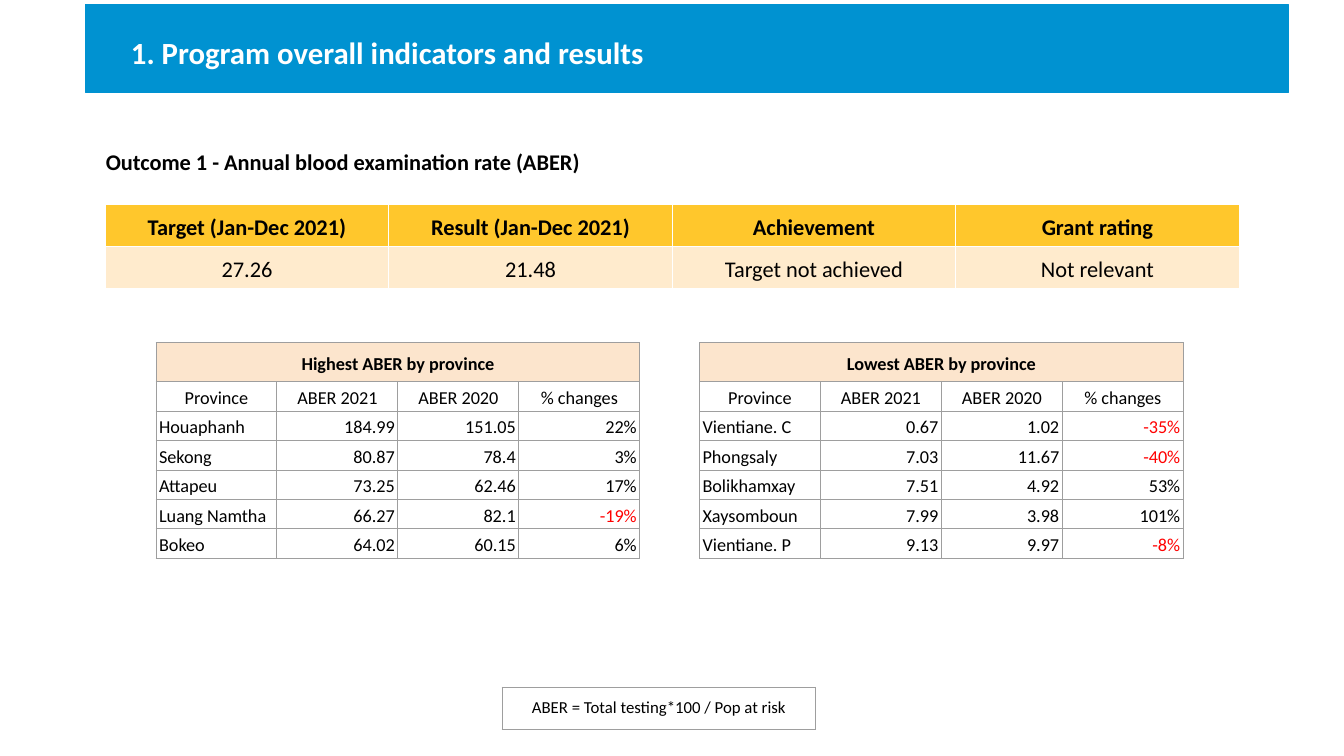
from lxml import etree
from pptx import Presentation
from pptx import util as u
from pptx.dml.color import RGBColor
from pptx.enum import shapes, text
from pptx.oxml import ns

FONT = "Calibri"
BLACK, WHITE, RED = "000000", "FFFFFF", "FF0000"
BLUE, GOLD, CREAM, PEACH, GREY = "0092D1", "FFC72C", "FFEBCD", "FCE5CD", "9E9E9E"
LEFT, CENTER, RIGHT = text.PP_ALIGN.LEFT, text.PP_ALIGN.CENTER, text.PP_ALIGN.RIGHT
TIGHT_MARGINS = (2.25, 1.5)

SUMMARY = [
    ["Target (Jan-Dec 2021)", "Result (Jan-Dec 2021)", "Achievement", "Grant rating"],
    ["27.26", "21.48", "Target not achieved", "Not relevant"],
]
PROVINCE_HEADINGS = ["Province", "ABER 2021", "ABER 2020", "% changes"]
HIGHEST = [
    ["Houaphanh", "184.99", "151.05", "22%"],
    ["Sekong", "80.87", "78.4", "3%"],
    ["Attapeu", "73.25", "62.46", "17%"],
    ["Luang Namtha", "66.27", "82.1", "-19%"],
    ["Bokeo", "64.02", "60.15", "6%"],
]
LOWEST = [
    ["Vientiane. C", "0.67", "1.02", "-35%"],
    ["Phongsaly", "7.03", "11.67", "-40%"],
    ["Bolikhamxay", "7.51", "4.92", "53%"],
    ["Xaysomboun", "7.99", "3.98", "101%"],
    ["Vientiane. P", "9.13", "9.97", "-8%"],
]


def rgb(value):
    return RGBColor.from_string(value)


def write(frame, words, size, color=BLACK, bold=False, align=LEFT, spacing=None):
    frame.text = words
    paragraph = frame.paragraphs[0]
    paragraph.alignment = align
    paragraph.line_spacing = spacing
    font = paragraph.runs[0].font
    font.name, font.size, font.bold = FONT, u.Pt(size), bold
    font.color.rgb = rgb(color)


def set_margins(target, horizontal, vertical):
    target.margin_left = target.margin_right = u.Pt(horizontal)
    target.margin_top = target.margin_bottom = u.Pt(vertical)


def set_borders(cell, color):
    properties = cell._tc.get_or_add_tcPr()
    for position, side in enumerate(("lnL", "lnR", "lnT", "lnB")):
        line = etree.Element(ns.qn(f"a:{side}"), w=str(u.Pt(0.75)))
        fill = etree.SubElement(line, ns.qn("a:solidFill"))
        etree.SubElement(fill, ns.qn("a:srgbClr"), val=color)
        properties.insert(position, line)


def add_title_bar(slide, words):
    bar = slide.shapes.add_shape(shapes.MSO_SHAPE.RECTANGLE,
                                 u.Pt(61.2), u.Pt(3.4), u.Pt(859), u.Pt(62.8))
    bar.shadow.inherit = False
    bar.fill.solid()
    bar.fill.fore_color.rgb = rgb(BLUE)
    bar.line.color.rgb = rgb(BLUE)
    bar.line.width = u.Pt(0.75)
    frame = bar.text_frame
    set_margins(frame, 0, 0)
    frame.margin_left = u.Pt(32.4)
    frame.word_wrap = True
    frame.vertical_anchor = text.MSO_ANCHOR.MIDDLE
    write(frame, words, 22, WHITE, bold=True, spacing=1.2)


def add_heading(slide, words):
    box = slide.shapes.add_textbox(u.Pt(75.6), u.Pt(100), u.Pt(859), u.Pt(30))
    set_margins(box.text_frame, 0, 0)
    box.text_frame.word_wrap = True
    write(box.text_frame, words, 16, bold=True, spacing=1.3)


def add_plain_table(slide, left, top, width, row_heights, column_count):
    frame = slide.shapes.add_table(len(row_heights), column_count, u.Pt(left), u.Pt(top),
                                   u.Pt(width), u.Pt(sum(row_heights)))
    table = frame.table
    table.first_row = table.horz_banding = False
    for row, height in zip(table.rows, row_heights):
        row.height = u.Pt(height)
    return table


def style_cell(cell, fill, border, margins=TIGHT_MARGINS, anchor=text.MSO_ANCHOR.MIDDLE):
    set_margins(cell, *margins)
    cell.vertical_anchor = anchor
    if fill:
        cell.fill.solid()
        cell.fill.fore_color.rgb = rgb(fill)
    else:
        cell.fill.background()
    set_borders(cell, border)


def add_summary_table(slide):
    table = add_plain_table(slide, 75.2, 146.3, 810, [30, 30], len(SUMMARY[0]))
    for r, row in enumerate(SUMMARY):
        for c, words in enumerate(row):
            cell = table.cell(r, c)
            style_cell(cell, CREAM if r else GOLD, WHITE)
            write(cell.text_frame, words, 16, bold=r == 0, align=CENTER, spacing=1.15)


def add_province_table(slide, left, title, provinces):
    table = add_plain_table(slide, left, 244.8, 345.6, [28] + [21] * (len(provinces) + 1),
                            len(PROVINCE_HEADINGS))
    title_cell = table.cell(0, 0)
    title_cell.merge(table.cell(0, len(PROVINCE_HEADINGS) - 1))
    for c in range(len(PROVINCE_HEADINGS)):
        style_cell(table.cell(0, c), PEACH, GREY)
    write(title_cell.text_frame, title, 13, bold=True, align=CENTER, spacing=1.15)
    for r, row in enumerate([PROVINCE_HEADINGS] + provinces, start=1):
        for c, words in enumerate(row):
            cell = table.cell(r, c)
            style_cell(cell, None, GREY)
            align = CENTER if r == 1 else RIGHT if c else LEFT
            color = RED if words.startswith("-") else BLACK
            write(cell.text_frame, words, 13, color, align=align, spacing=1.15)


def add_formula(slide, words):
    cell = add_plain_table(slide, 358.6, 491, 224.2, [30.2], 1).cell(0, 0)
    style_cell(cell, None, GREY, (7.2, 7.2), text.MSO_ANCHOR.TOP)
    write(cell.text_frame, words, 12, align=CENTER)


def main():
    presentation = Presentation()
    presentation.slide_width, presentation.slide_height = u.Pt(960), u.Pt(540)
    slide = presentation.slides.add_slide(presentation.slide_layouts[6])
    add_heading(slide, "Outcome 1 - Annual blood examination rate (ABER)")
    add_title_bar(slide, "1. Program overall indicators and results")
    add_summary_table(slide)
    add_province_table(slide, 111.4, "Highest ABER by province", HIGHEST)
    add_province_table(slide, 499.6, "Lowest ABER by province", LOWEST)
    add_formula(slide, "ABER = Total testing*100 / Pop at risk")
    presentation.save("out.pptx")


if __name__ == "__main__":
    main()
